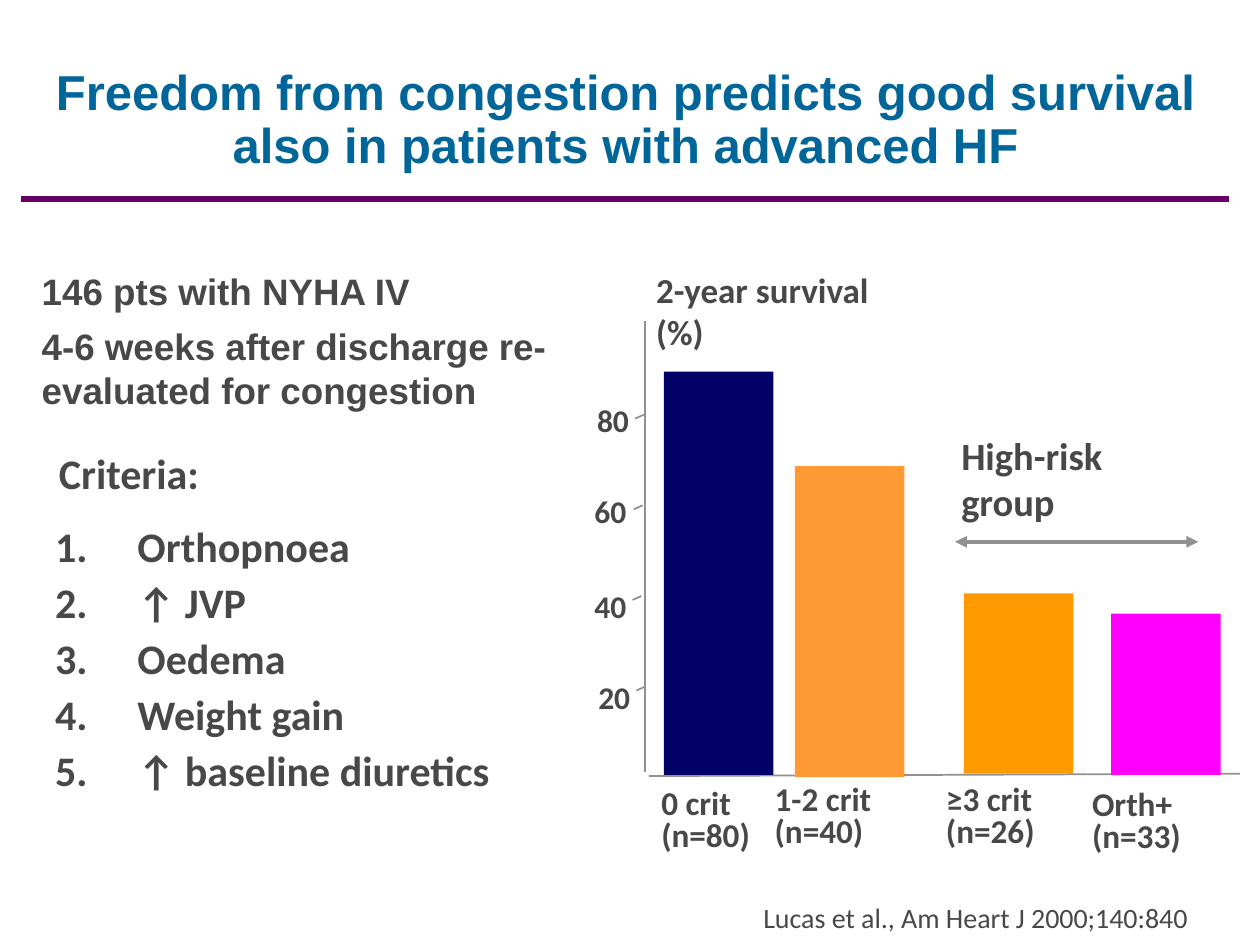
from dataclasses import dataclass

from lxml import etree
from pptx import Presentation
from pptx.dml.color import RGBColor
from pptx.enum import shapes, text
from pptx.oxml import ns
from pptx.util import Pt


@dataclass(frozen=True)
class Theme:
    heading_font: str = "Arial"
    label_font: str = "Calibri"
    title_color: str = "006699"
    text_color: str = "484848"
    rule_color: str = "660066"
    axis_color: str = "919191"
    bar_colors: tuple = ("000066", "FF9933", "FF9900", "FF00FF")
    title_size: float = 28
    body_size: float = 21
    list_size: float = 24
    group_size: float = 22
    axis_title_size: float = 20
    category_size: float = 19
    tick_size: float = 18
    source_size: float = 16


class SlideBuilder:
    def __init__(self, slide, theme):
        self.slide = slide
        self.theme = theme

    def add_lines(self, frame, lines, size, font=None, color=None, bold=True,
                  spacing=None, before=None, align=None):
        for index, line in enumerate(lines):
            paragraph = frame.paragraphs[0] if index == 0 else frame.add_paragraph()
            paragraph.alignment = align
            paragraph.line_spacing = spacing
            if before is not None:
                paragraph.space_before = Pt(before)
            run = paragraph.add_run()
            run.text = line
            run.font.name = font or self.theme.label_font
            run.font.size = Pt(size)
            run.font.bold = bold
            run.font.color.rgb = RGBColor.from_string(color or self.theme.text_color)

    def placeholder(self, index, box, lines, size, anchor, **style):
        shape = self.slide.placeholders[index]
        shape.left, shape.top, shape.width, shape.height = map(Pt, box)
        frame = shape.text_frame
        frame.auto_size = text.MSO_AUTO_SIZE.NONE
        frame.vertical_anchor = anchor
        self.add_lines(frame, lines, size, self.theme.heading_font, **style)
        return frame

    def label(self, box, lines, size, wrap=True, **style):
        frame = self.slide.shapes.add_textbox(*map(Pt, box)).text_frame
        frame.word_wrap = wrap
        frame.auto_size = text.MSO_AUTO_SIZE.SHAPE_TO_FIT_TEXT
        self.add_lines(frame, lines, size, **style)
        return frame

    def bullets(self, frame, kind, indent=0, **attributes):
        """Give every paragraph a bullet element (buNone, buAutoNum) and hanging indent."""
        for paragraph in frame.paragraphs:
            properties = paragraph._p.get_or_add_pPr()
            properties.set("marL", str(Pt(indent)))
            properties.set("indent", str(-Pt(indent)))
            etree.SubElement(properties, ns.qn("a:" + kind), attributes)

    def bar(self, box, color):
        shape = self.slide.shapes.add_shape(
            shapes.MSO_SHAPE.RECTANGLE, *map(Pt, box))
        shape.shadow.inherit = False
        shape.fill.solid()
        shape.fill.fore_color.rgb = RGBColor.from_string(color)
        shape.line.fill.background()

    def line(self, start, end, width=1, color=None, arrows=False):
        connector = self.slide.shapes.add_connector(
            shapes.MSO_CONNECTOR.STRAIGHT, *map(Pt, start + end))
        connector.line.width = Pt(width)
        connector.line.color.rgb = RGBColor.from_string(color or self.theme.axis_color)
        properties = connector._element.spPr
        if arrows:
            outline = properties.find(ns.qn("a:ln"))
            for tag in ("a:headEnd", "a:tailEnd"):
                etree.SubElement(outline, ns.qn(tag), type="triangle")
        etree.SubElement(properties, ns.qn("a:effectLst"))


def add_findings(builder):
    theme = builder.theme
    builder.placeholder(
        0, (12.2, 28.8, 690.5, 80.6),
        ["Freedom from congestion predicts good survival also in patients with advanced HF"],
        theme.title_size, text.MSO_ANCHOR.MIDDLE, color=theme.title_color,
        spacing=0.9, align=text.PP_ALIGN.CENTER)
    builder.line((12.2, 113.8), (702, 113.8), 3, theme.rule_color)
    body = builder.placeholder(
        1, (16.6, 149.8, 326.9, 102.2),
        ["146 pts with NYHA IV", "4-6 weeks after discharge re-evaluated for congestion"],
        theme.body_size, text.MSO_ANCHOR.TOP, before=6.3)
    builder.bullets(body, "buNone")
    builder.label((26.6, 252, 95.8, 36), ["Criteria:"], theme.list_size, wrap=False)
    criteria = builder.label(
        (24.5, 293.8, 268.6, 169.9),
        ["Orthopnoea", "↑ JVP", "Oedema", "Weight gain", "↑ baseline diuretics"],
        theme.list_size, before=3.2)
    builder.bullets(criteria, "buAutoNum", 47, type="arabicPeriod")


def add_survival_bars(builder):
    theme = builder.theme
    builder.line((368.6, 183.6), (368.6, 441.4))
    builder.label((367.9, 149.8, 157, 55.4), ["2-year survival", "(%)"],
                  theme.axis_title_size)

    # value, right end of tick, label left, label top
    ticks = [
        (20, 368.6, 334.8, 383.8),
        (40, 366.5, 332.6, 331.9),
        (60, 367.2, 332.6, 277.9),
        (80, 367.9, 334.1, 225.4),
    ]
    for step, (value, right, left, top) in enumerate(ticks):
        tick_top = 392.4 - 51.8 * step
        builder.line((right, tick_top), (right - 5, tick_top + 2.2))
        builder.label((left, top, 33.1, 28.8), [str(value)], theme.tick_size, wrap=False)

    # bar left, bar top, bar height, label left, label top, label width, label lines
    groups = [
        (379.4, 212.4, 230.4, 370.8, 447.8, 76.3, ["0 crit", "(n=80)"]),
        (454.3, 266.4, 177.8, 435.6, 445.7, 96.5, ["1-2 crit", "(n=40)"]),
        (550.8, 339.1, 103, 533.5, 445.7, 96.5, ["≥3 crit", "(n=26)"]),
        (635, 350.6, 92.2, 617, 448.6, 96.5, ["Orth+", "(n=33)"]),
    ]
    builder.line((370.8, 443.5), (708.5, 442.1))
    for group, color in zip(groups, theme.bar_colors):
        left, top, height, label_left, label_top, label_width, lines = group
        builder.bar((left, top, 62.6, height), color)
        builder.label((label_left, label_top, label_width, 43.9), lines,
                      theme.category_size, spacing=0.8)

    builder.label((542.2, 243.4, 143.3, 59.8), ["High-risk group"], theme.group_size)
    builder.line((545.8, 309.6), (684.7, 309.6), 2.25, arrows=True)
    builder.label((429.1, 511.2, 264.2, 26.6), ["Lucas et al., Am Heart J 2000;140:840"],
                  theme.source_size, wrap=False, bold=False)


def main():
    presentation = Presentation()
    presentation.slide_width, presentation.slide_height = Pt(720), Pt(540)
    slide = presentation.slides.add_slide(presentation.slide_layouts[1])
    builder = SlideBuilder(slide, Theme())
    add_findings(builder)
    add_survival_bars(builder)
    presentation.save("out.pptx")


if __name__ == "__main__":
    main()
